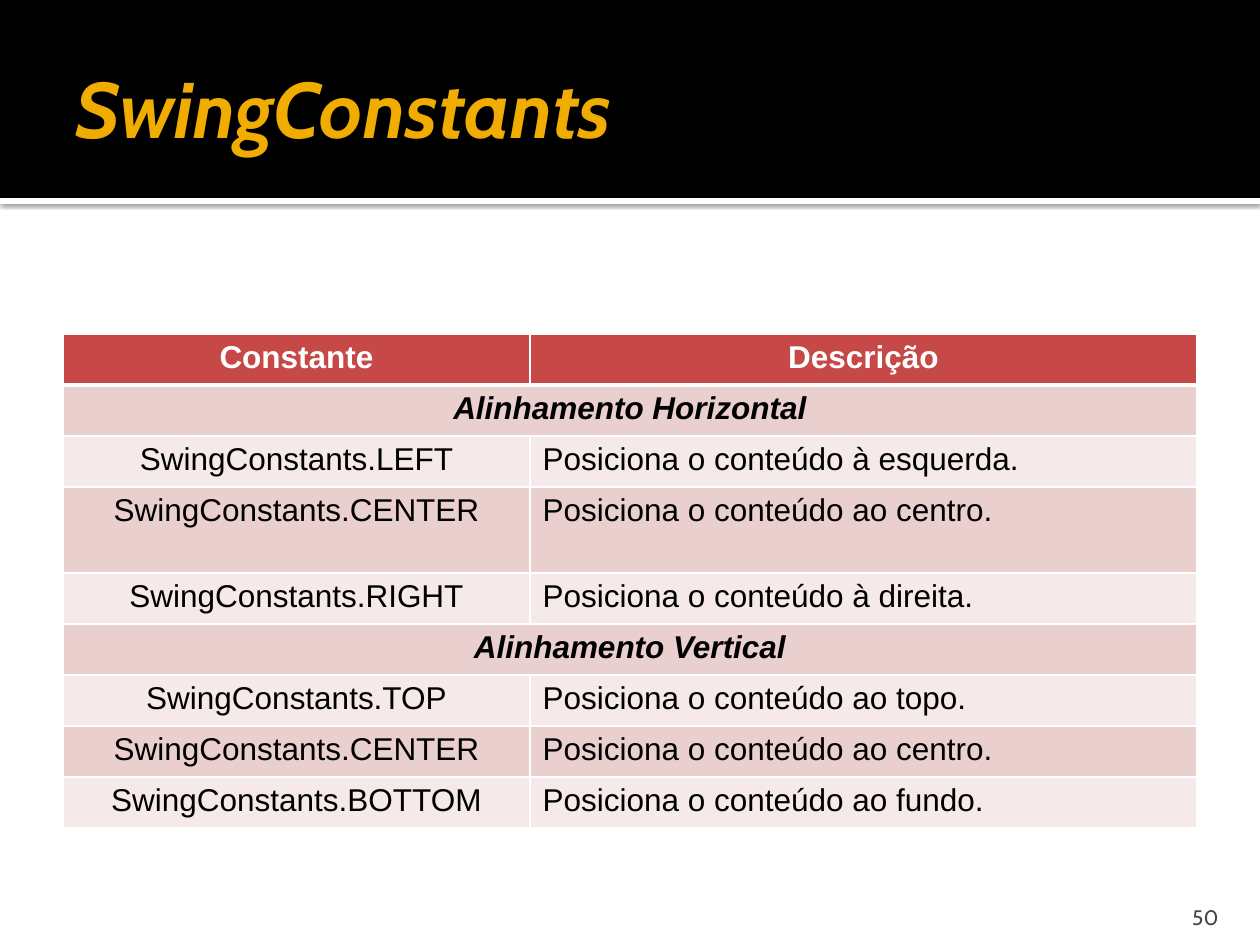
from lxml import etree
from pptx import Presentation
from pptx import util as u
from pptx.dml.color import RGBColor
from pptx.enum import shapes, text
from pptx.oxml import parse_xml
from pptx.oxml.ns import nsdecls, qn

BLACK = RGBColor(0x00, 0x00, 0x00)
WHITE = RGBColor(0xFF, 0xFF, 0xFF)
GOLD = RGBColor(0xF0, 0xAD, 0x00)
RED = RGBColor(0xC6, 0x48, 0x47)
DARK_BAND = RGBColor(0xEA, 0xCF, 0xCF)
LIGHT_BAND = RGBColor(0xF5, 0xE9, 0xE9)
GREY = RGBColor(0x45, 0x45, 0x45)

TITLE = "SwingConstants"
PAGE = "50"
# A row with a single entry is a section heading across both columns.
ROWS = [
    ("Constante", "Descrição"),
    ("Alinhamento Horizontal",),
    ("SwingConstants.LEFT", "Posiciona o conteúdo à esquerda."),
    ("SwingConstants.CENTER", "Posiciona o conteúdo ao centro."),
    ("SwingConstants.RIGHT", "Posiciona o conteúdo à direita."),
    ("Alinhamento Vertical",),
    ("SwingConstants.TOP", "Posiciona o conteúdo ao topo."),
    ("SwingConstants.CENTER", "Posiciona o conteúdo ao centro."),
    ("SwingConstants.BOTTOM", "Posiciona o conteúdo ao fundo."),
]
COL_WIDTHS = [467, 667]
ROW_HEIGHT = 51
TALL_ROWS = {3: 86}


def px(n):
    return u.Emu(round(n * 914400 / 126))


def set_font(p, name, size, color, bold=False, italic=False):
    f = p.font
    f.name, f.size, f.bold, f.italic = name, u.Pt(size), bold, italic
    f.color.rgb = color


def add_band(slide, top, height, color):
    sp = slide.shapes.add_shape(shapes.MSO_SHAPE.RECTANGLE, 0, px(top), px(1260), px(height))
    sp.shadow.inherit = False
    sp.fill.solid()
    sp.fill.fore_color.rgb = color
    sp.line.fill.background()
    return sp


def add_drop_shadow(sp):
    effects = sp._element.spPr.find(qn("a:effectLst"))
    effects.append(parse_xml(
        f'<a:outerShdw {nsdecls("a")} blurRad="{u.Pt(2.5)}" dist="{u.Pt(0.8)}" dir="5400000">'
        '<a:srgbClr val="000000"><a:alpha val="60000"/></a:srgbClr></a:outerShdw>'))


def set_borders(cell, top, bottom):
    tc_pr = cell._tc.get_or_add_tcPr()
    for side, width in (("L", 1), ("R", 1), ("T", top), ("B", bottom)):
        ln = etree.SubElement(tc_pr, qn(f"a:ln{side}"), w=str(u.Pt(width)))
        fill = etree.SubElement(ln, qn("a:solidFill"))
        etree.SubElement(fill, qn("a:srgbClr"), val=str(WHITE))


def add_constants_table(slide):
    heights = [TALL_ROWS.get(i, ROW_HEIGHT) for i in range(len(ROWS))]
    table = slide.shapes.add_table(len(ROWS), 2, px(63), px(334),
                                   px(sum(COL_WIDTHS)), px(sum(heights))).table
    table.horz_banding = False
    for column, width in zip(table.columns, COL_WIDTHS):
        column.width = px(width)
    for i, (entries, height) in enumerate(zip(ROWS, heights)):
        table.rows[i].height = px(height)
        header, section = i == 0, len(entries) == 1
        for cell in table.rows[i].cells:
            set_borders(cell, 3 if i == 1 else 1, 3 if header else 1)
            cell.fill.solid()
            cell.fill.fore_color.rgb = RED if header else DARK_BAND if i % 2 else LIGHT_BAND
        if section:
            table.cell(i, 0).merge(table.cell(i, 1))
        for j, entry in enumerate(entries):
            p = table.cell(i, j).text_frame.paragraphs[0]
            p.text = entry
            p.alignment = text.PP_ALIGN.CENTER if header or j == 0 else text.PP_ALIGN.LEFT
            set_font(p, "Arial", 18, WHITE if header else BLACK, header or section, section)


def main():
    prs = Presentation()
    prs.slide_width, prs.slide_height = px(1260), px(945)
    slide = prs.slides.add_slide(prs.slide_layouts[5])

    add_drop_shadow(add_band(slide, 198, 6, WHITE))
    add_band(slide, 0, 198, BLACK)

    title = slide.shapes.title
    slide.shapes._spTree.append(title._element)  # in front of the bands
    title.left, title.top, title.width, title.height = px(63), px(21), px(1087), px(173)
    tf = title.text_frame
    tf.text = TITLE
    tf.vertical_anchor = text.MSO_ANCHOR.MIDDLE
    tf.margin_right = u.Inches(0.05)
    p = tf.paragraphs[0]
    p.alignment = text.PP_ALIGN.LEFT
    set_font(p, "Cabin", 45, GOLD, bold=True, italic=True)

    add_constants_table(slide)

    tf = slide.shapes.add_textbox(px(1130), px(892), px(101), px(38)).text_frame
    tf.word_wrap = True
    tf.vertical_anchor = text.MSO_ANCHOR.BOTTOM
    tf.margin_bottom = 0
    p = tf.paragraphs[0]
    p.text = PAGE
    p.alignment = text.PP_ALIGN.RIGHT
    set_font(p, "Cabin", 12, GREY)

    prs.save("out.pptx")


if __name__ == "__main__":
    main()
